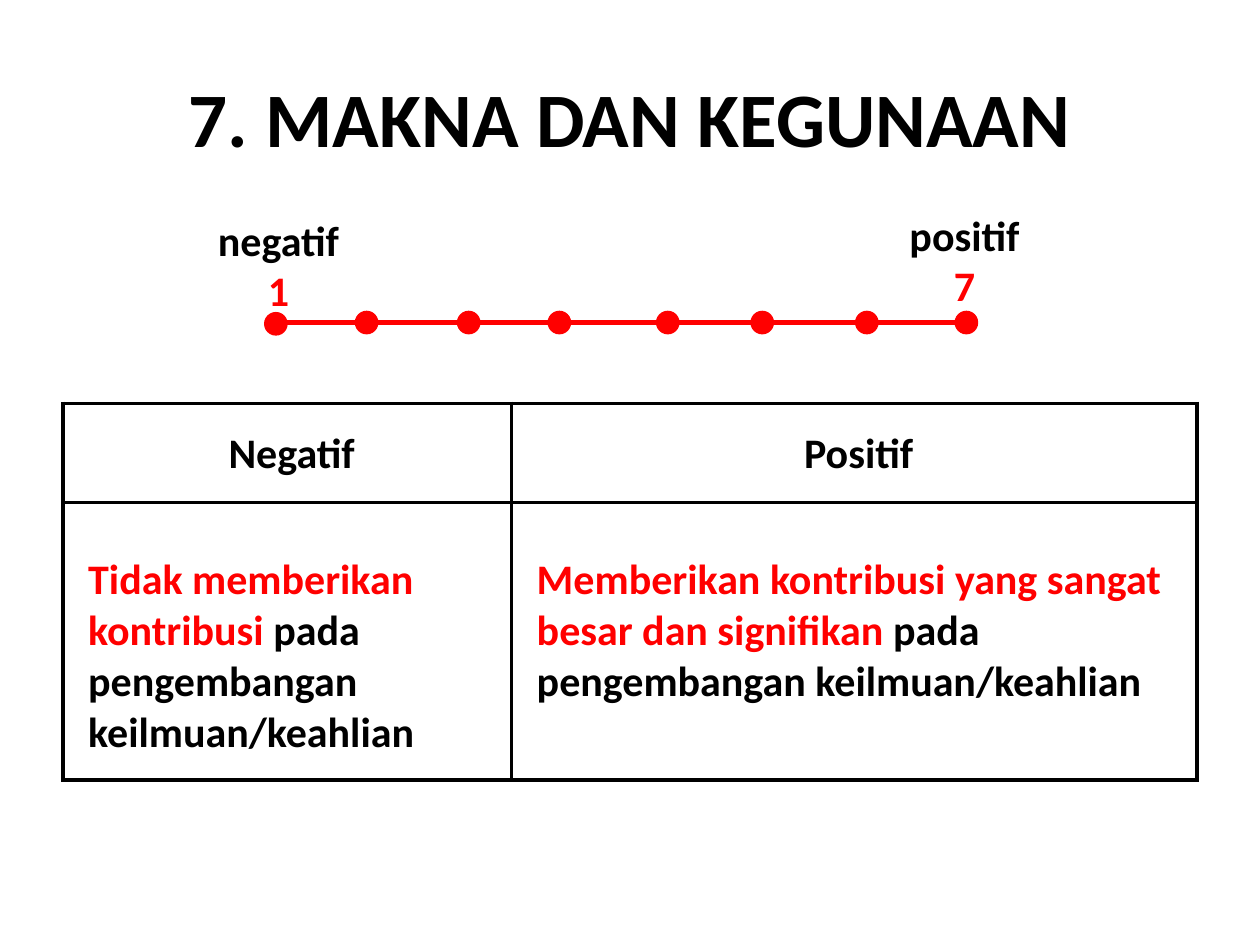
from lxml.etree import SubElement
from pptx import Presentation
from pptx.dml.color import RGBColor
from pptx.enum.shapes import MSO_CONNECTOR, MSO_SHAPE
from pptx.enum.text import MSO_ANCHOR, PP_ALIGN
from pptx.oxml.ns import qn
from pptx.util import Inches, Pt

WIDE, HIGH = Inches(10), Inches(7.5)
BLACK, RED, WHITE = "000000", "FF0000", "FFFFFF"
DOTS = [21.1, 28.3, 36.4, 43.6, 52.2, 59.7, 68, 75.9]
ENDS = [
    ("negatif", "1", (16.2, 22, 11.8, 12.13)),
    ("positif", "7", (71.1, 21.47, 10.9, 12.13)),
]
COLS, ROWS = (35.6, 54.4), (10.53, 29.33)
HEADS = ["Negatif", "Positif"]
NOTES = [
    "Tidak memberikan kontribusi ",
    "Memberikan kontribusi yang sangat besar dan signifikan ",
]
TAIL = "pada pengembangan keilmuan/keahlian"


def wide(share):
    """Percent of the slide's width."""
    return int(WIDE * share / 100)


def high(share):
    """Percent of the slide's height."""
    return int(HIGH * share / 100)


def area(x, y, w, h):
    return wide(x), high(y), wide(w), high(h)


def color(code):
    return RGBColor.from_string(code)


def write(para, parts, size=24, align=PP_ALIGN.CENTER):
    """Fill a paragraph with (text, colour) parts."""
    para.alignment = align
    para.font.name, para.font.size, para.font.bold = "Calibri", Pt(size), True
    for text, code in parts:
        run = para.add_run()
        run.text = text
        run.font.color.rgb = color(code)


def add_title(slide, text):
    frame = slide.shapes.add_textbox(*area(5, 4, 90, 16.67)).text_frame
    frame.word_wrap = True
    frame.vertical_anchor = MSO_ANCHOR.MIDDLE
    write(frame.paragraphs[0], [(text, BLACK)], 44)


def add_line(shapes, x, end, y):
    line = shapes.add_connector(
        MSO_CONNECTOR.STRAIGHT, wide(x), high(y), wide(end), high(y))
    line.line.color.rgb = color(RED)
    line.line.width = Pt(3)
    SubElement(line._element.spPr, qn("a:effectLst"))


def add_dot(shapes, x, y):
    dot = shapes.add_shape(
        MSO_SHAPE.FLOWCHART_CONNECTOR, *area(x, y, 1.6, 2.13))
    dot.shadow.inherit = False
    dot.fill.solid()
    dot.fill.fore_color.rgb = dot.line.color.rgb = color(RED)
    dot.line.width = Pt(2)


def add_label(shapes, word, mark, box):
    frame = shapes.add_textbox(*area(*box)).text_frame
    frame.word_wrap = False
    write(frame.paragraphs[0], [(word, BLACK)])
    write(frame.add_paragraph(), [(mark, RED)])


def add_scale(slide):
    shapes = slide.shapes.add_group_shape().shapes
    add_line(shapes, 21.7, 76.2, 34.13)
    for x in DOTS:
        add_dot(shapes, x, 33.2 if x == DOTS[0] else 33.07)
    for end in ENDS:
        add_label(shapes, *end)


def style(cell, left, top=0):
    """Set a cell's margins, borders and fill."""
    cell.margin_left, cell.margin_top = Inches(left), Inches(top)
    cell.margin_right = cell.margin_bottom = 0
    props = cell._tc.get_or_add_tcPr()
    for side in ("lnL", "lnR", "lnT", "lnB"):
        edge = SubElement(props, qn(f"a:{side}"), w=str(Pt(2.25)))
        fill = SubElement(edge, qn("a:solidFill"))
        SubElement(fill, qn("a:srgbClr"), val=BLACK)
    cell.fill.solid()
    cell.fill.fore_color.rgb = color(WHITE)


def add_grid(slide):
    table = slide.shapes.add_table(
        2, 2, *area(5, 42.67, sum(COLS), sum(ROWS))).table
    for row, share in zip(table.rows, ROWS):
        row.height = high(share)
    for i, share in enumerate(COLS):
        table.columns[i].width = wide(share)
        head, body = table.cell(0, i), table.cell(1, i)
        style(head, 0.07)
        para = head.text_frame.paragraphs[0]
        para.line_spacing = 1.5
        write(para, [(HEADS[i], BLACK)])
        style(body, 0.2, 0.41)
        write(body.text_frame.paragraphs[0],
              [(NOTES[i], RED), (TAIL, BLACK)], align=PP_ALIGN.LEFT)


def main():
    deck = Presentation()
    deck.slide_width, deck.slide_height = WIDE, HIGH
    slide = deck.slides.add_slide(deck.slide_layouts[6])
    add_title(slide, "7. MAKNA DAN KEGUNAAN")
    add_grid(slide)
    add_scale(slide)
    deck.save("out.pptx")


if __name__ == "__main__":
    main()
